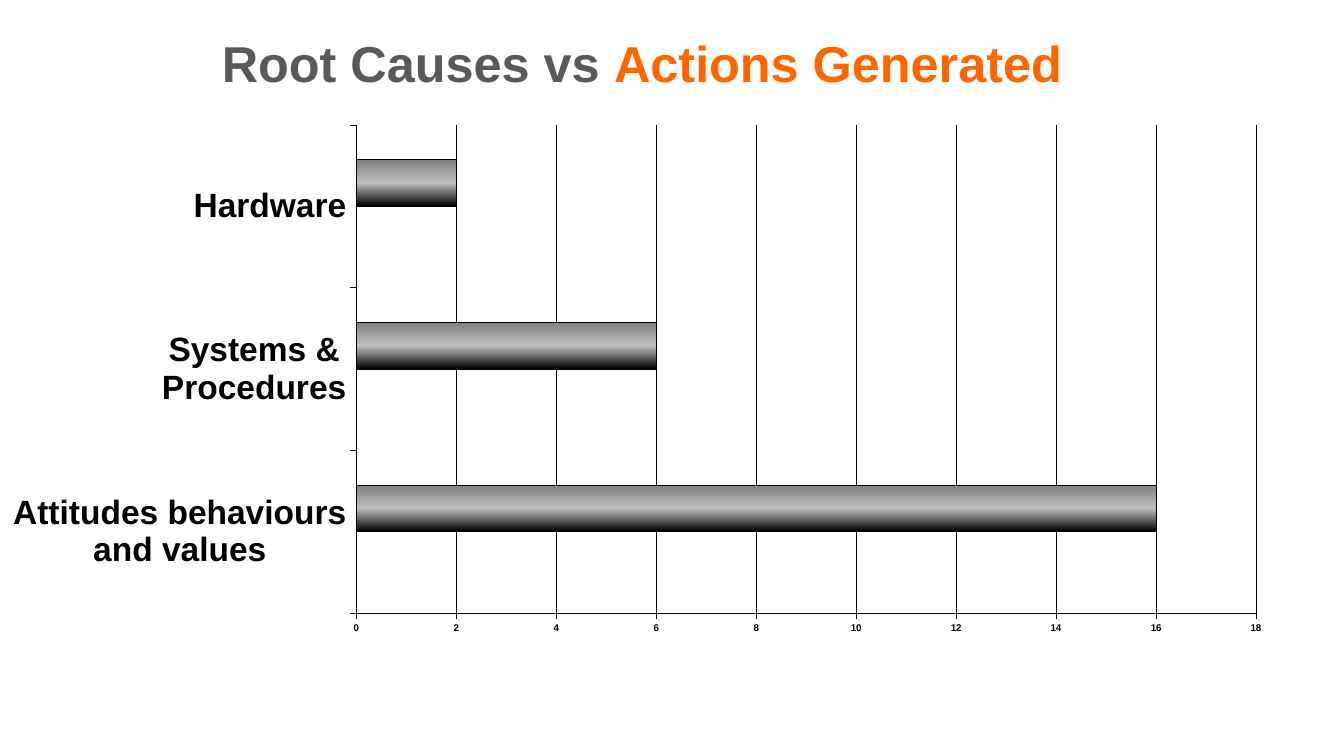
"""Build the root causes versus actions generated slide."""
from dataclasses import dataclass

from lxml import etree
from pptx import Presentation
from pptx.chart.data import CategoryChartData
from pptx.dml.color import RGBColor
from pptx.enum.chart import XL_CHART_TYPE, XL_TICK_MARK
from pptx.enum.text import MSO_ANCHOR, PP_ALIGN
from pptx.oxml import parse_xml
from pptx.oxml.ns import nsdecls, qn
from pptx.util import Inches, Pt

BAR = XL_CHART_TYPE.BAR_CLUSTERED
OUTSIDE, NO_TICK = XL_TICK_MARK.OUTSIDE, XL_TICK_MARK.NONE
LEFT, MIDDLE = PP_ALIGN.LEFT, MSO_ANCHOR.MIDDLE
FONT = "Arial"
COLORS = {
    "title": "595959", "accent": "FF6600", "ink": "000000",
    "rust": "C03300", "maroon": "800000", "silver": "BFBFBF", "gray": "808080",
}
CATEGORIES = ["Attitudes behaviours and values", "Systems & Procedures", "Hardware"]
PLOT = {"x": 0.273, "y": 0.085, "w": 0.723, "h": 0.86}


@dataclass(frozen=True)
class BarSeries:
    """One series with its values and gradient."""
    name: str
    values: tuple[int, ...]
    stops: tuple[tuple[int, str], ...]
    angle: int


SERIES = [
    BarSeries("Series 1", (0, 0, 0), ((4, "rust"), (50, "accent"), (100, "maroon")), 90),
    BarSeries("Series 2", (16, 6, 2), ((0, "ink"), (50, "silver"), (100, "gray")), 270),
]


def rgb(name: str) -> RGBColor:
    """Return a named colour."""
    return RGBColor.from_string(COLORS[name])


def set_line(line, width: float) -> None:
    """Give a line the ink colour and a width in points."""
    line.color.rgb = rgb("ink")
    line.width = Pt(width)


def add_title(slide) -> None:
    """Place and write the two-colour title."""
    sp = slide.shapes.title
    sp.left, sp.top, sp.width, sp.height = (Inches(v) for v in (2.1, 0.28, 8.8, 0.68))
    tf = sp.text_frame
    tf.word_wrap = True
    tf.vertical_anchor = MIDDLE
    p = tf.paragraphs[0]
    p.alignment = LEFT
    for text, color in (("Root Causes vs ", "title"), ("Actions Generated", "accent")):
        r = p.add_run()
        r.text = text
        r.font.name, r.font.size, r.font.bold = FONT, Pt(36), True
        r.font.color.rgb = rgb(color)


def style_series(series, bar: BarSeries) -> None:
    """Fill a series with its gradient and outline it."""
    series.format.fill.solid()
    set_line(series.format.line, 0.25)
    stops = "".join(
        f'<a:gs pos="{pos * 1000}"><a:srgbClr val="{COLORS[color]}"/></a:gs>'
        for pos, color in bar.stops
    )
    gradient = parse_xml(
        f'<a:gradFill {nsdecls("a")} rotWithShape="1"><a:gsLst>{stops}</a:gsLst>'
        f'<a:lin ang="{bar.angle * 60000}" scaled="1"/></a:gradFill>'
    )
    sp_pr = series.format.fill._xPr
    sp_pr.replace(sp_pr.find(qn("a:solidFill")), gradient)


def style_axis(axis, size: int) -> None:
    """Set tick marks, line and label size of an axis."""
    axis.major_tick_mark, axis.minor_tick_mark = OUTSIDE, NO_TICK
    axis.tick_labels.font.size = Pt(size)
    axis.tick_labels.font.bold = True
    set_line(axis.format.line, 0.06)


def set_plot_layout(chart) -> None:
    """Fix the inner plot area within the chart."""
    area = chart.element.find(".//" + qn("c:plotArea"))
    layout = area.find(qn("c:layout"))
    if layout is None:
        layout = etree.Element(qn("c:layout"))
        area.insert(0, layout)
    manual = etree.SubElement(layout, qn("c:manualLayout"))
    settings = {"layoutTarget": "inner", "xMode": "edge", "yMode": "edge", **PLOT}
    for tag, value in settings.items():
        etree.SubElement(manual, qn(f"c:{tag}")).set("val", str(value))


def add_bars(slide) -> None:
    """Add the bar chart of actions per root cause."""
    data = CategoryChartData()
    data.categories = CATEGORIES
    for bar in SERIES:
        data.add_series(bar.name, bar.values)
    box = (Inches(v) for v in (0.13, 0.76, 12.38, 5.63))
    chart = slide.shapes.add_chart(BAR, *box, data).chart
    chart.has_title = chart.has_legend = False
    chart.font.name, chart.font.size, chart.font.bold = FONT, Pt(18), True
    chart.font.color.rgb = rgb("ink")
    plot = chart.plots[0]
    plot.gap_width, plot.overlap, plot.vary_by_categories = 150, 0, False
    for series, bar in zip(plot.series, SERIES):
        style_series(series, bar)
    style_axis(chart.category_axis, 24)
    axis = chart.value_axis
    style_axis(axis, 7)
    axis.minimum_scale, axis.maximum_scale, axis.major_unit = 0, 18, 2
    axis.has_major_gridlines = True
    set_line(axis.major_gridlines.format.line, 0.06)
    set_plot_layout(chart)


def main() -> None:
    """Build and save the presentation."""
    prs = Presentation()
    prs.slide_width, prs.slide_height = Inches(13.33), Inches(7.5)
    slide = prs.slides.add_slide(prs.slide_layouts[5])
    add_title(slide)
    add_bars(slide)
    prs.save("out.pptx")


if __name__ == "__main__":
    main()
